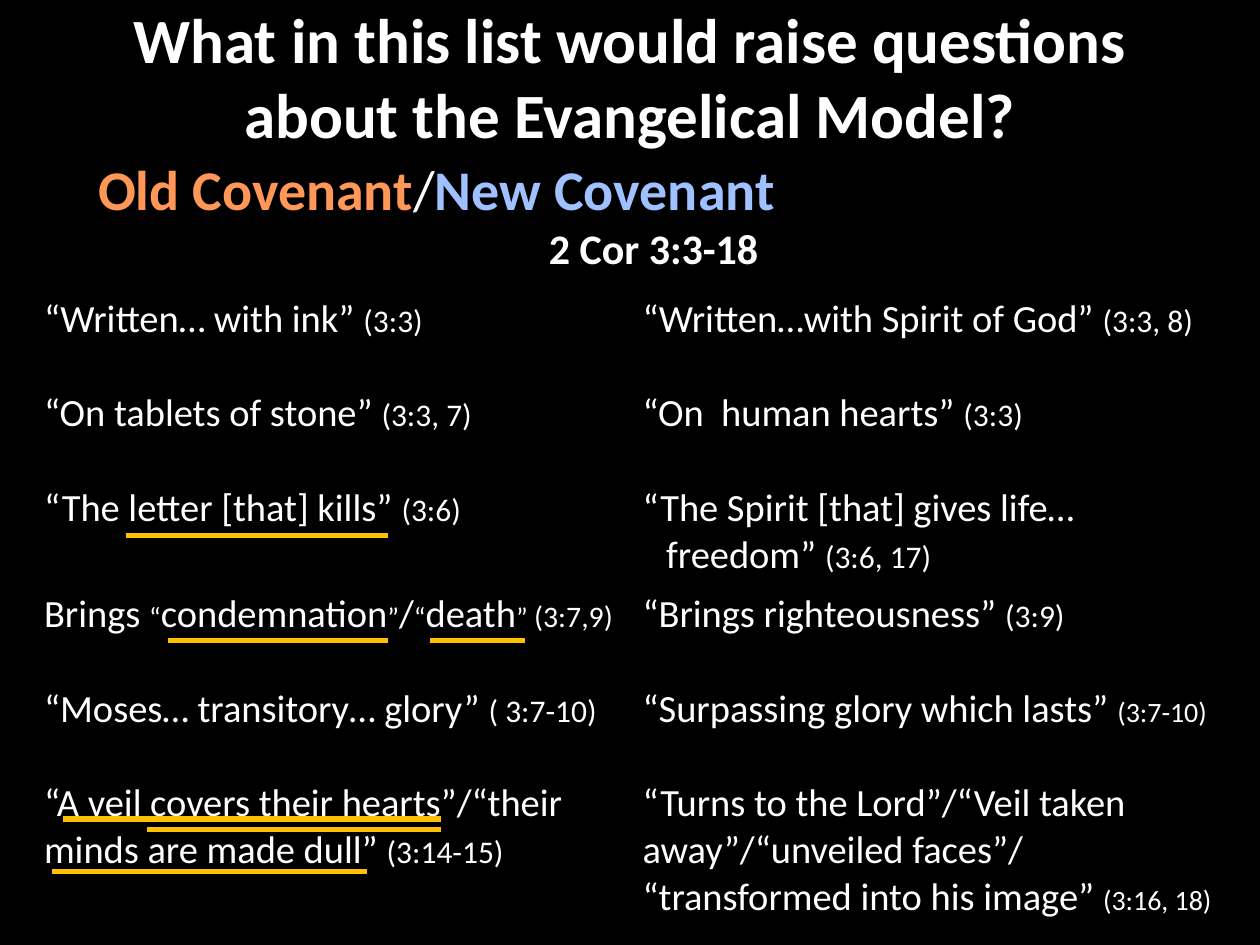
from dataclasses import dataclass

from lxml import etree
from pptx import Presentation
from pptx.dml.color import RGBColor
from pptx.enum.shapes import MSO_CONNECTOR
from pptx.enum.text import MSO_ANCHOR, PP_ALIGN
from pptx.oxml.ns import qn
from pptx.util import Pt

PX = 6350  # EMU per px, 144 px to the inch
CENTER, LEFT = PP_ALIGN.CENTER, PP_ALIGN.LEFT
TOP = MSO_ANCHOR.TOP
STRAIGHT = MSO_CONNECTOR.STRAIGHT


@dataclass(frozen=True)
class Theme:
    font: str = "Calibri"
    background: str = "000000"
    text: str = "FFFFFF"
    old: str = "FF9856"
    new: str = "A0C1FF"
    accent: str = "FFC000"
    title: int = 36
    heading: int = 32
    passage: int = 24
    body: int = 22
    reference: int = 18
    small_reference: int = 16
    tight_reference: int = 17
    small_quote: int = 16
    underline: int = 3


class SlideBuilder:
    def __init__(self, presentation, theme):
        self.theme = theme
        self.slide = presentation.slides.add_slide(presentation.slide_layouts[6])
        self.fill(self.slide.background.fill, theme.background)

    def fill(self, target, color):
        target.solid()
        target.fore_color.rgb = RGBColor.from_string(color)

    def run(self, paragraph, text, size, color=None, bold=False):
        run = paragraph.add_run()
        run.text = text
        run.font.name = self.theme.font
        run.font.size = Pt(size)
        run.font.bold = bold
        run.font.color.rgb = RGBColor.from_string(color or self.theme.text)

    def indent(self, paragraph, margin, first_line):
        properties = paragraph._p.get_or_add_pPr()
        properties.set("marL", str(margin * PX))
        properties.set("indent", str(first_line * PX))

    def text_frame(self, left, top, width, height):
        box = self.slide.shapes.add_textbox(left * PX, top * PX, width * PX, height * PX)
        frame = box.text_frame
        frame.word_wrap = True
        frame.vertical_anchor = TOP
        return frame

    def title(self, text, bounds):
        frame = self.text_frame(*bounds)
        frame.margin_left = frame.margin_right = 0
        frame.margin_top = frame.margin_bottom = 0
        paragraph = frame.paragraphs[0]
        paragraph.alignment = CENTER
        self.run(paragraph, text, self.theme.title, bold=True)

    def heading(self, old, new, passage, bounds):
        theme = self.theme
        frame = self.text_frame(*bounds)
        covenants = frame.paragraphs[0]
        covenants.alignment = LEFT
        self.indent(covenants, 54, -28)
        self.run(covenants, old, theme.heading, theme.old, True)
        self.run(covenants, "/", theme.heading)
        self.run(covenants, new, theme.heading, theme.new, True)
        source = frame.add_paragraph()
        source.alignment = CENTER
        self.indent(source, 54, 0)
        self.run(source, passage, theme.passage, bold=True)

    def border(self, cell):
        properties = cell._tc.get_or_add_tcPr()
        for position, side in enumerate(("a:lnL", "a:lnR", "a:lnT", "a:lnB")):
            line = etree.Element(qn(side), w=str(Pt(1)))
            solid = etree.SubElement(line, qn("a:solidFill"))
            etree.SubElement(solid, qn("a:srgbClr"), val=self.theme.background)
            properties.insert(position, line)

    def table(self, rows, bounds, row_height, hanging):
        """Fill a table with runs; rows pair a hanging flag with their cells."""
        left, top, width = bounds
        frame = self.slide.shapes.add_table(
            len(rows), 2, left * PX, top * PX, width * PX, len(rows) * row_height * PX)
        table = frame.table
        table.first_row = table.horz_banding = False
        for table_row, (hangs, *cells) in zip(table.rows, rows):
            table_row.height = row_height * PX
            for cell, runs in zip(table_row.cells, cells):
                self.fill(cell.fill, self.theme.background)
                self.border(cell)
                paragraph = cell.text_frame.paragraphs[0]
                if hangs:
                    self.indent(paragraph, hanging, -hanging)
                for text, size in runs:
                    self.run(paragraph, text, size)

    def underline(self, start, end, y):
        line = self.slide.shapes.add_connector(
            STRAIGHT, start * PX, y * PX, end * PX, y * PX)
        line.line.color.rgb = RGBColor.from_string(self.theme.accent)
        line.line.width = Pt(self.theme.underline)
        etree.SubElement(line._element.spPr, qn("a:effectLst"))


def covenant_rows(theme):
    def verse(quote, reference, size=theme.reference):
        return [(quote + " ", theme.body), (reference, size)]

    small = theme.small_reference
    condemnation = [
        ("Brings ", theme.body), ("“", theme.small_quote),
        ("condemnation", theme.body), ("”", theme.small_quote),
        ("/", theme.body), ("“", theme.small_quote),
        ("death", theme.body), ("” ", theme.small_quote),
        ("(3:7,9)", theme.tight_reference),
    ]
    return [
        (True, verse("“Written… with ink”", "(3:3)"),
         verse("“Written…with Spirit of God”", "(3:3, 8)")),
        (True, verse("“On tablets of stone”", "(3:3, 7)"),
         verse("“On  human hearts”", "(3:3)")),
        (True, verse("“The letter [that] kills”", "(3:6)"),
         verse("“The Spirit [that] gives life… freedom”", "(3:6, 17)")),
        (False, condemnation, verse("“Brings righteousness”", "(3:9)")),
        (True, verse("“Moses… transitory… glory”", "( 3:7-10)"),
         verse("“Surpassing glory which lasts”", "(3:7-10)", small)),
        (False, verse("“A veil covers their hearts”/“their minds are made dull”",
                      "(3:14-15)"),
         verse("“Turns to the Lord”/“Veil taken away”/“unveiled faces”/ "
               "“transformed into his image”", "(3:16, 18)", small)),
    ]


def main():
    presentation = Presentation()
    presentation.slide_width = 1440 * PX
    presentation.slide_height = 1080 * PX
    theme = Theme()
    builder = SlideBuilder(presentation, theme)

    builder.table(covenant_rows(theme), (36, 331, 1368), row_height=108, hanging=27)
    builder.heading("Old Covenant", "New Covenant", "2 Cor 3:3-18",
                    (72, 170, 1296, 168))
    builder.title("What in this list would raise questions about the Evangelical Model?",
                  (72, 0, 1296, 180))
    underlines = [
        (144, 444, 612),  # letter [that] kills
        (192, 444, 732),  # condemnation
        (492, 600, 732),  # death
        (72, 504, 936),   # a veil covers their hearts
        (168, 504, 948),  # covers their hearts
        (60, 420, 996),   # minds are made dull
    ]
    for start, end, y in underlines:
        builder.underline(start, end, y)

    presentation.save("out.pptx")


if __name__ == "__main__":
    main()
